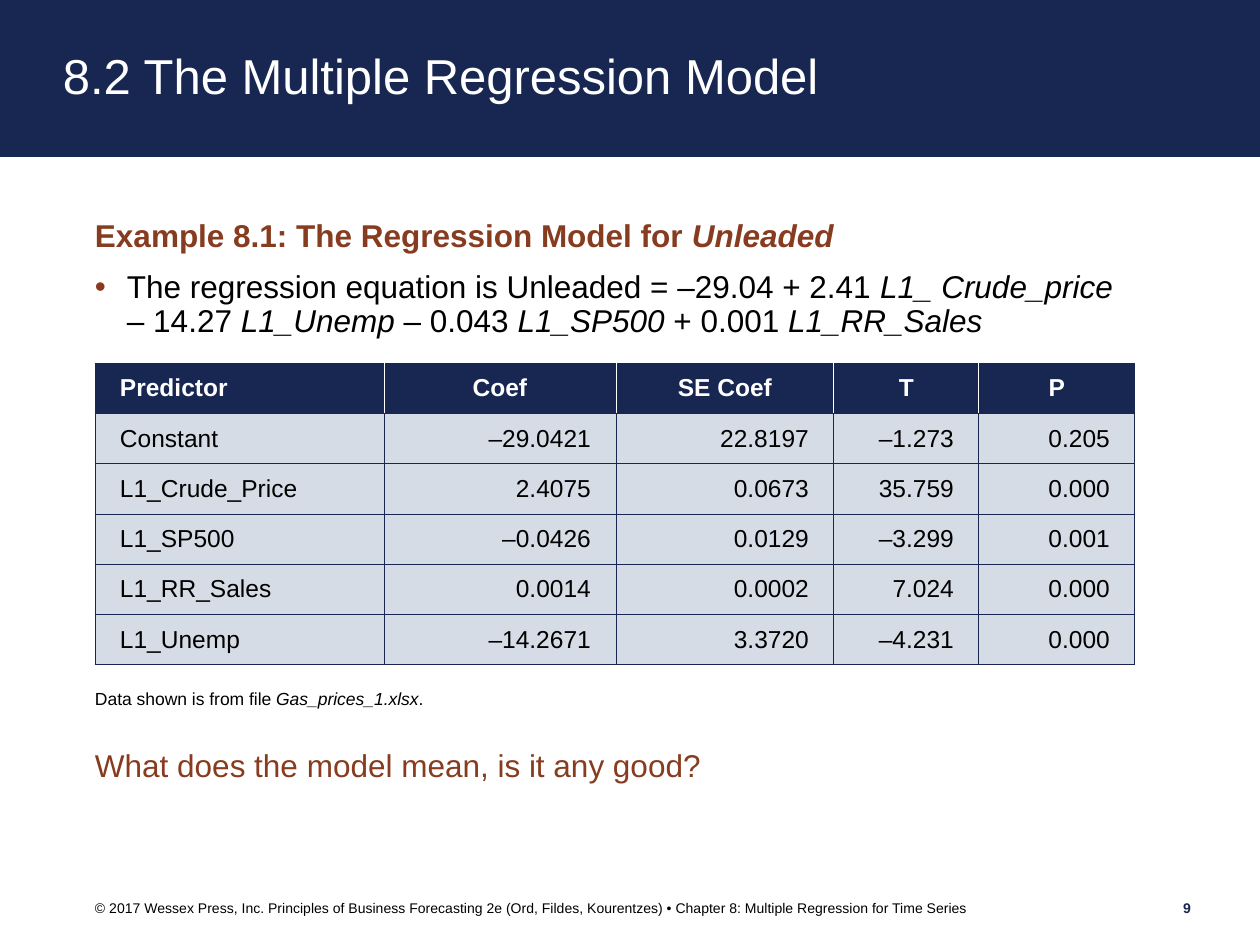
from pptx import Presentation
from pptx.dml.color import RGBColor
from pptx.enum.shapes import MSO_SHAPE as Shape
from pptx.enum.text import MSO_ANCHOR as Anchor, PP_ALIGN as Align
from pptx.oxml.ns import qn
from pptx.util import Emu, Pt
from lxml.etree import SubElement

COLORS = {"navy": "182752", "rust": "873B1F", "pale": "D6DCE5",
          "white": "FFFFFF", "black": "000000"}
PX_PER_INCH = 126
LEFT, WIDTH = 95, 1040


def px(length):
    return Emu(round(length * 914400 / PX_PER_INCH))


def rgb(color):
    return RGBColor.from_string(COLORS[color])


def add_color(parent, tag, color):
    SubElement(SubElement(parent, qn(tag)), qn("a:srgbClr"), val=COLORS[color])


def write(paragraph, text, size=18, color="black", bold=False, align=Align.LEFT,
          line=None, before=None, bullet=None, font="Arial"):
    if bullet:
        props = paragraph._p.get_or_add_pPr()
        indent = px(32)
        props.set("marL", str(indent))
        props.set("indent", str(-indent))
        add_color(props, "a:buClr", bullet)
        SubElement(props, qn("a:buFont"), typeface=font)
        SubElement(props, qn("a:buChar"), char="•")
    paragraph.alignment = align
    if line:
        paragraph.line_spacing = line
    if before:
        paragraph.space_before = Pt(before)
    for number, part in enumerate(text.split("*")):
        if part:
            run = paragraph.add_run()
            run.text = part
            run.font.name = font
            run.font.size = Pt(size)
            run.font.bold = bold
            run.font.italic = number % 2 == 1
            run.font.color.rgb = rgb(color)


class SlideBuilder:
    def __init__(self, slide, rule=0.5):
        self.slide = slide
        self.rule = rule

    def set_frame(self, frame, insets=(0, 0, 0, 0), anchor=Anchor.TOP):
        frame.word_wrap = True
        frame.vertical_anchor = anchor
        (frame.margin_left, frame.margin_top,
         frame.margin_right, frame.margin_bottom) = map(px, insets)

    def banner(self, box, text, **style):
        banner = self.slide.shapes.add_shape(Shape.RECTANGLE, *map(px, box))
        banner.shadow.inherit = False
        banner.fill.solid()
        banner.fill.fore_color.rgb = rgb("navy")
        banner.line.fill.background()
        self.set_frame(banner.text_frame, (63, 6, 0, 6), Anchor.MIDDLE)
        write(banner.text_frame.paragraphs[0], text, **style)

    def text(self, box, *paragraphs, anchor=Anchor.TOP):
        frame = self.slide.shapes.add_textbox(*map(px, box)).text_frame
        self.set_frame(frame, anchor=anchor)
        for number, (text, style) in enumerate(paragraphs):
            paragraph = frame.add_paragraph() if number else frame.paragraphs[0]
            write(paragraph, text, **style)

    def cell(self, cell, text, fill, borders, **style):
        cell.margin_left = cell.margin_right = px(25)
        cell.margin_top = cell.margin_bottom = px(1)
        cell.vertical_anchor = Anchor.MIDDLE
        props = cell._tc.get_or_add_tcPr()
        for side, color in borders.items():
            edge = SubElement(props, qn(f"a:ln{side}"), w=str(Pt(self.rule)))
            add_color(edge, "a:solidFill", color)
        cell.fill.solid()
        cell.fill.fore_color.rgb = rgb(fill)
        write(cell.text_frame.paragraphs[0], text, size=14, **style)

    def table(self, left, top, widths, height, rows):
        table = self.slide.shapes.add_table(
            len(rows), len(widths), px(left), px(top), px(sum(widths)), px(height)).table
        for column, width in zip(table.columns, widths):
            column.width = px(width)
        last = len(widths) - 1
        for r, values in enumerate(rows):
            table.rows[r].height = px(height / len(rows))
            header = r == 0
            inner = "white" if header else "navy"
            for c, value in enumerate(values):
                borders = {"L": inner if c else "navy", "R": inner if c < last else "navy",
                           "T": "navy", "B": "navy"}
                number_align = Align.CENTER if header else Align.RIGHT
                self.cell(table.cell(r, c), value, "navy" if header else "pale", borders,
                          color="white" if header else "black", bold=header,
                          align=number_align if c else Align.LEFT)


def main():
    deck = Presentation()
    deck.slide_width, deck.slide_height = px(1260), px(945)
    page = SlideBuilder(deck.slides.add_slide(deck.slide_layouts[6]))

    page.banner((0, 0, 1260, 157), "8.2 The Multiple Regression Model",
                size=28, color="white", line=0.9)
    page.text(
        (LEFT, 220, WIDTH, 631),
        ("Example 8.1: The Regression Model for *Unleaded*",
         dict(color="rust", bold=True, line=0.9)),
        ("The regression equation is Unleaded = –29.04 + 2.41 *L1_ Crude_price *"
         "– 14.27 *L1_Unemp *– 0.043 *L1_SP500 *+ 0.001 *L1_RR_Sales*",
         dict(line=0.9, before=10, bullet="rust")))
    page.table(LEFT, 363, [289, 232, 218, 145, 156], 302, [
        ("Predictor", "Coef", "SE Coef", "T", "P"),
        ("Constant", "–29.0421", "22.8197", "–1.273", "0.205"),
        ("L1_Crude_Price", "2.4075", "0.0673", "35.759", "0.000"),
        ("L1_SP500", "–0.0426", "0.0129", "–3.299", "0.001"),
        ("L1_RR_Sales", "0.0014", "0.0002", "7.024", "0.000"),
        ("L1_Unemp", "–14.2671", "3.3720", "–4.231", "0.000"),
    ])
    page.text((LEFT, 688, 714, 21),
              ("Data shown is from file *Gas_prices_1.xlsx*.", dict(size=10)))
    page.text((LEFT, 746, WIDTH, 38),
              ("What does the model mean, is it any good?", dict(color="rust")))
    page.text((LEFT, 895, 1026, 25),
              ("© 2017 Wessex Press, Inc. Principles of Business Forecasting 2e "
               "(Ord, Fildes, Kourentzes) • Chapter 8: Multiple Regression for Time Series",
               dict(size=8)), anchor=Anchor.MIDDLE)
    page.text((1134, 895, 57, 25),
              ("9", dict(size=8, color="navy", bold=True, align=Align.RIGHT)),
              anchor=Anchor.MIDDLE)
    deck.save("out.pptx")


if __name__ == "__main__":
    main()
